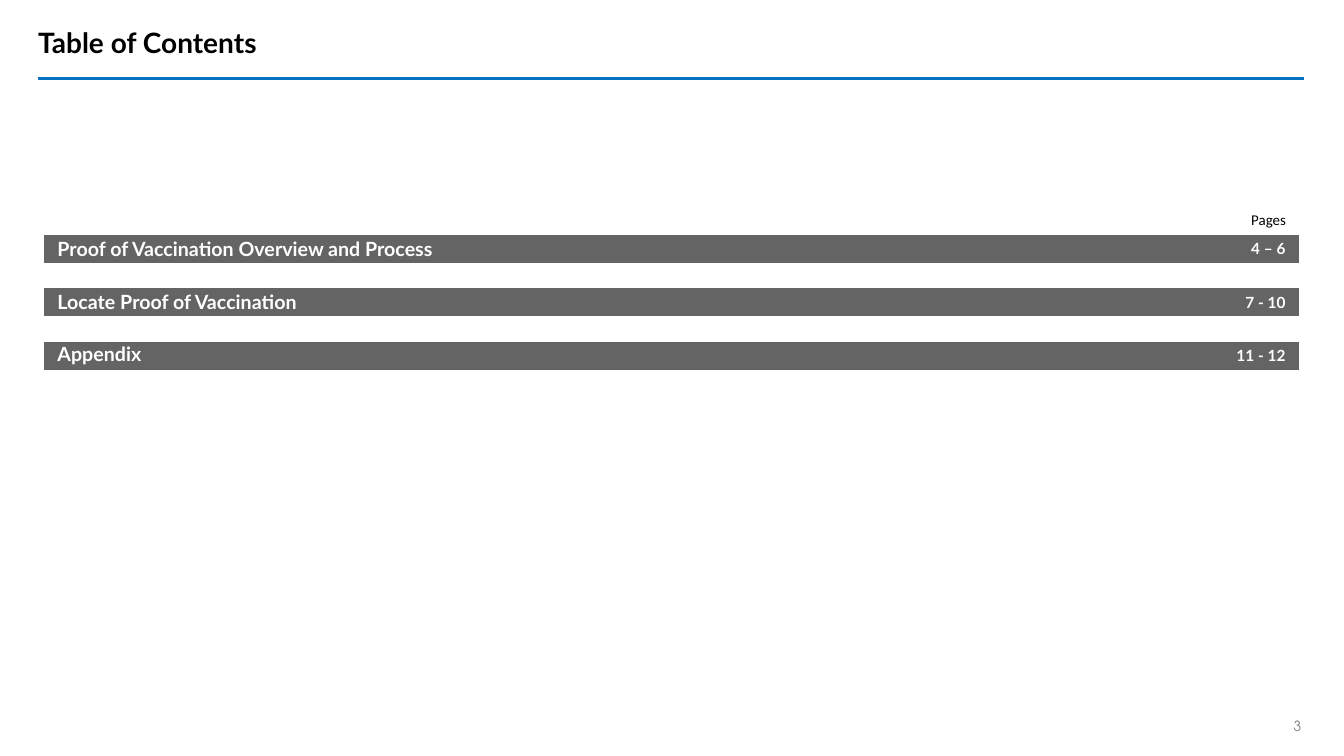
from dataclasses import dataclass

from lxml import etree
from pptx import Presentation
from pptx import util as u
from pptx.dml.color import RGBColor
from pptx.enum import shapes, text
from pptx.oxml.ns import qn


@dataclass(frozen=True)
class Theme:
    ink: str = "000000"
    rule: str = "0070C0"
    bar: str = "646464"
    bar_text: str = "FFFFFF"
    muted: str = "808080"
    title_pt: float = 20
    section_pt: float = 14
    pages_pt: float = 11
    label_pt: float = 10.7
    number_pt: float = 10
    gap_pt: float = 8


@dataclass(frozen=True)
class Style:
    size: float
    color: str
    font: str = "Lato"
    bold: bool = False
    align: text.PP_ALIGN = text.PP_ALIGN.LEFT


@dataclass(frozen=True)
class Label:
    words: str
    box: tuple[float, float, float, float]
    style: Style
    inset: tuple[float, float] = (0, 0)
    wrap: bool = True


@dataclass(frozen=True)
class Section:
    name: str
    pages: str
    anchor: text.MSO_ANCHOR = text.MSO_ANCHOR.MIDDLE


T = Theme()
NO_STYLE_NO_GRID = "{2D5ABB26-0587-4C30-8999-92F81FD0307C}"
COLUMNS = (10.11, 2.33)
BAR_H, GAP_H, LAST_H = 0.28, 0.25, 0.28
CELL_INSET = 0.13

SECTIONS = (
    Section("Proof of Vaccination Overview and Process", "4 – 6"),
    Section("Locate Proof of Vaccination", "7 - 10"),
    Section("Appendix", "11 - 12", text.MSO_ANCHOR.TOP),
)
LABELS = (
    Label("3", (12.64, 7.12, 0.46, 0.17),
          Style(T.number_pt, T.muted, "TeX Gyre Adventor", align=text.PP_ALIGN.CENTER)),
    Label("Pages", (12.28, 2.02, 0.65, 0.31), Style(T.label_pt, T.ink, "Calibri"),
          (0.13, 0.07), wrap=False),
    Label("Table of Contents", (0.28, 0.02, 12.55, 0.79),
          Style(T.title_pt, T.ink, bold=True), (0.1, 0.05)),
)


def write(tf, words: str, style: Style) -> None:
    p = tf.paragraphs[0]
    p.alignment = style.align
    r = p.add_run()
    r.text = words
    r.font.name = style.font
    r.font.size = u.Pt(style.size)
    r.font.bold = style.bold
    r.font.color.rgb = RGBColor.from_string(style.color)


def add_label(s, label: Label) -> None:
    tf = s.shapes.add_textbox(*map(u.Inches, label.box)).text_frame
    tf.word_wrap = label.wrap
    tf.vertical_anchor = text.MSO_ANCHOR.MIDDLE
    tf.margin_left = tf.margin_right = u.Inches(label.inset[0])
    tf.margin_top = tf.margin_bottom = u.Inches(label.inset[1])
    write(tf, label.words, label.style)


def add_title_rule(s) -> None:
    ln = s.shapes.add_connector(shapes.MSO_CONNECTOR.STRAIGHT, u.Inches(0.38),
                                u.Inches(0.78), u.Inches(12.93), u.Inches(0.78))
    ln.line.color.rgb = RGBColor.from_string(T.rule)
    ln.line.width = u.Pt(2.25)
    etree.SubElement(ln.element.spPr, qn("a:effectLst"))


def clear_cell(cell) -> None:
    """Leave a cell unfilled, with a type size small enough for a gap row."""
    cell.fill.background()
    p = cell.text_frame.paragraphs[0]
    etree.SubElement(p._p, qn("a:endParaRPr"), sz=str(int(T.gap_pt * 100)))


def fill_bar_cell(cell, words: str, style: Style, anchor: text.MSO_ANCHOR) -> None:
    cell.fill.solid()
    cell.fill.fore_color.rgb = RGBColor.from_string(T.bar)
    cell.vertical_anchor = anchor
    write(cell.text_frame, words, style)


def add_contents(s) -> None:
    """Draw one bar row per section, each followed by an empty row."""
    heights = [BAR_H, GAP_H] * len(SECTIONS)
    heights[-1] = LAST_H
    gf = s.shapes.add_table(len(heights), len(COLUMNS), u.Inches(0.44), u.Inches(2.33),
                            u.Inches(sum(COLUMNS)), u.Inches(sum(heights)))
    gf.element.find(".//" + qn("a:tableStyleId")).text = NO_STYLE_NO_GRID
    tbl = gf.table
    tbl.first_row = tbl.horz_banding = False
    for col, width in zip(tbl.columns, COLUMNS):
        col.width = u.Inches(width)
    for row, height in zip(tbl.rows, heights):
        row.height = u.Inches(height)
    for cell in tbl.iter_cells():
        cell.margin_left = cell.margin_right = u.Inches(CELL_INSET)
        cell.margin_top = cell.margin_bottom = 0

    name_style = Style(T.section_pt, T.bar_text, bold=True)
    pages_style = Style(T.pages_pt, T.bar_text, bold=True, align=text.PP_ALIGN.RIGHT)
    for i, section in enumerate(SECTIONS):
        fill_bar_cell(tbl.cell(2 * i, 0), section.name, name_style, section.anchor)
        fill_bar_cell(tbl.cell(2 * i, 1), section.pages, pages_style,
                      text.MSO_ANCHOR.MIDDLE)
        for col in range(len(COLUMNS)):
            clear_cell(tbl.cell(2 * i + 1, col))


def main() -> None:
    prs = Presentation()
    prs.slide_width, prs.slide_height = u.Inches(13.33), u.Inches(7.5)
    s = prs.slides.add_slide(prs.slide_layouts[6])
    add_title_rule(s)
    add_contents(s)
    for label in LABELS:
        add_label(s, label)
    prs.save("out.pptx")


if __name__ == "__main__":
    main()
